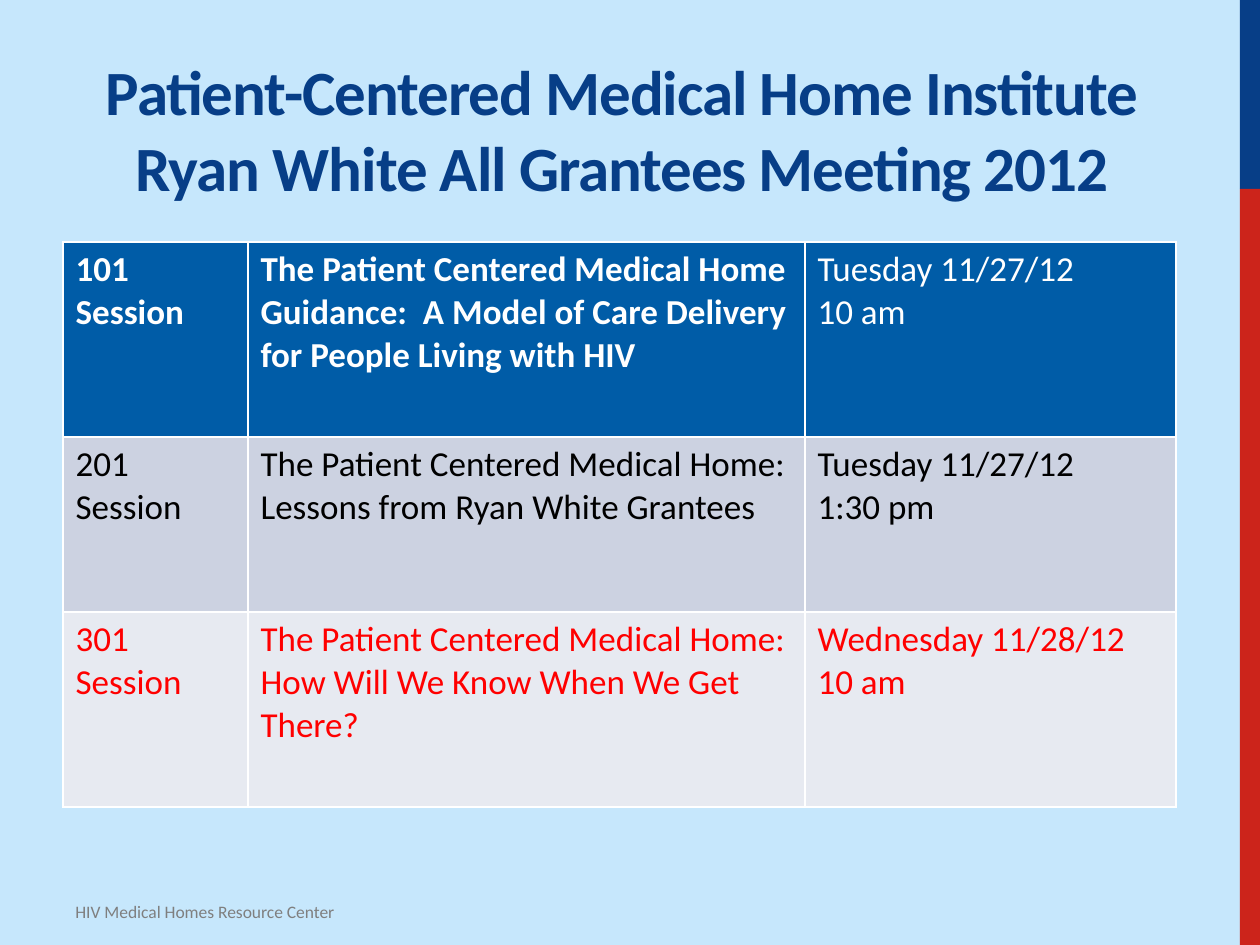
from pptx import Presentation
from pptx.dml.color import RGBColor
from pptx.enum.shapes import MSO_SHAPE
from pptx.enum.text import MSO_ANCHOR, PP_ALIGN
from pptx.util import Pt

RECT = MSO_SHAPE.RECTANGLE
BOTTOM = MSO_ANCHOR.BOTTOM
CENTER = PP_ALIGN.CENTER
PX = 914400 // 126
FONT = "Calibri"

COLORS = {
    "sky": "C6E7FC", "navy": "073E87", "red": "CC241B",
    "blue": "005CA7", "band": "CCD2E1", "pale": "E7EAF1",
    "white": "FFFFFF", "black": "000000", "alert": "FF0000", "gray": "7F7F7F",
}
TITLE = "Patient-Centered Medical Home Institute\vRyan White All Grantees Meeting 2012"
FOOTER = "HIV Medical Homes Resource Center"
PANELS = [
    ("sky", 0, 0, 1240, 945),
    ("navy", 1240, 0, 20, 189),
    ("red", 1240, 189, 20, 756),
]
COLUMNS = [185, 557, 371]
SESSIONS = [
    {"height": 195, "fill": "blue", "color": "white", "bold": [True, True, False],
     "cells": ["101 Session",
               "The Patient Centered Medical Home Guidance:  A Model of Care Delivery for People Living with HIV",
               "Tuesday 11/27/12\n10 am"]},
    {"height": 175, "fill": "band", "color": "black", "bold": [False] * 3,
     "cells": ["201 Session",
               "The Patient Centered Medical Home: Lessons from Ryan White Grantees",
               "Tuesday 11/27/12\n1:30 pm"]},
    {"height": 195, "fill": "pale", "color": "alert", "bold": [False] * 3,
     "cells": ["301 Session",
               "The Patient Centered Medical Home: \nHow Will We Know When We Get There?",
               "Wednesday 11/28/12\n10 am"]},
]


def rgb(name):
    return RGBColor.from_string(COLORS[name])


def box(*lengths):
    return [n * PX for n in lengths]


def write(tf, text, size, color, bold=False, align=None):
    tf.text = text
    tf.word_wrap = True
    for p in tf.paragraphs:
        p.alignment = align
        p.font.name = FONT
        p.font.size = Pt(size)
        p.font.bold = bold
        p.font.color.rgb = rgb(color)


prs = Presentation()
prs.slide_width, prs.slide_height = box(1260, 945)
s = prs.slides.add_slide(prs.slide_layouts[5])

for color, *place in PANELS:
    sp = s.shapes.add_shape(RECT, *box(*place))
    sp.shadow.inherit = False
    sp.fill.solid()
    sp.fill.fore_color.rgb = rgb(color)
    sp.line.fill.background()

title = s.shapes.title
s.shapes._spTree.append(title._element)
title.left, title.top, title.width, title.height = box(63, 21, 1118, 189)
title.text_frame.vertical_anchor = BOTTOM
write(title.text_frame, TITLE, 36, "navy", True, CENTER)
for r in title.text_frame.paragraphs[0].runs:
    r._r.get_or_add_rPr().set("spc", "-60")

heights = [row["height"] for row in SESSIONS]
table = s.shapes.add_table(len(SESSIONS), len(COLUMNS),
                           *box(63, 242, sum(COLUMNS), sum(heights))).table
for column, width in zip(table.columns, COLUMNS):
    column.width = width * PX
for i, row in enumerate(SESSIONS):
    table.rows[i].height = row["height"] * PX
    for j, (text, bold) in enumerate(zip(row["cells"], row["bold"])):
        cell = table.cell(i, j)
        cell.fill.solid()
        cell.fill.fore_color.rgb = rgb(row["fill"])
        write(cell.text_frame, text, 20, row["color"], bold)

footer = s.shapes.add_textbox(*box(63, 895, 473, 39))
write(footer.text_frame, FOOTER, 10, "gray")

prs.save("out.pptx")
